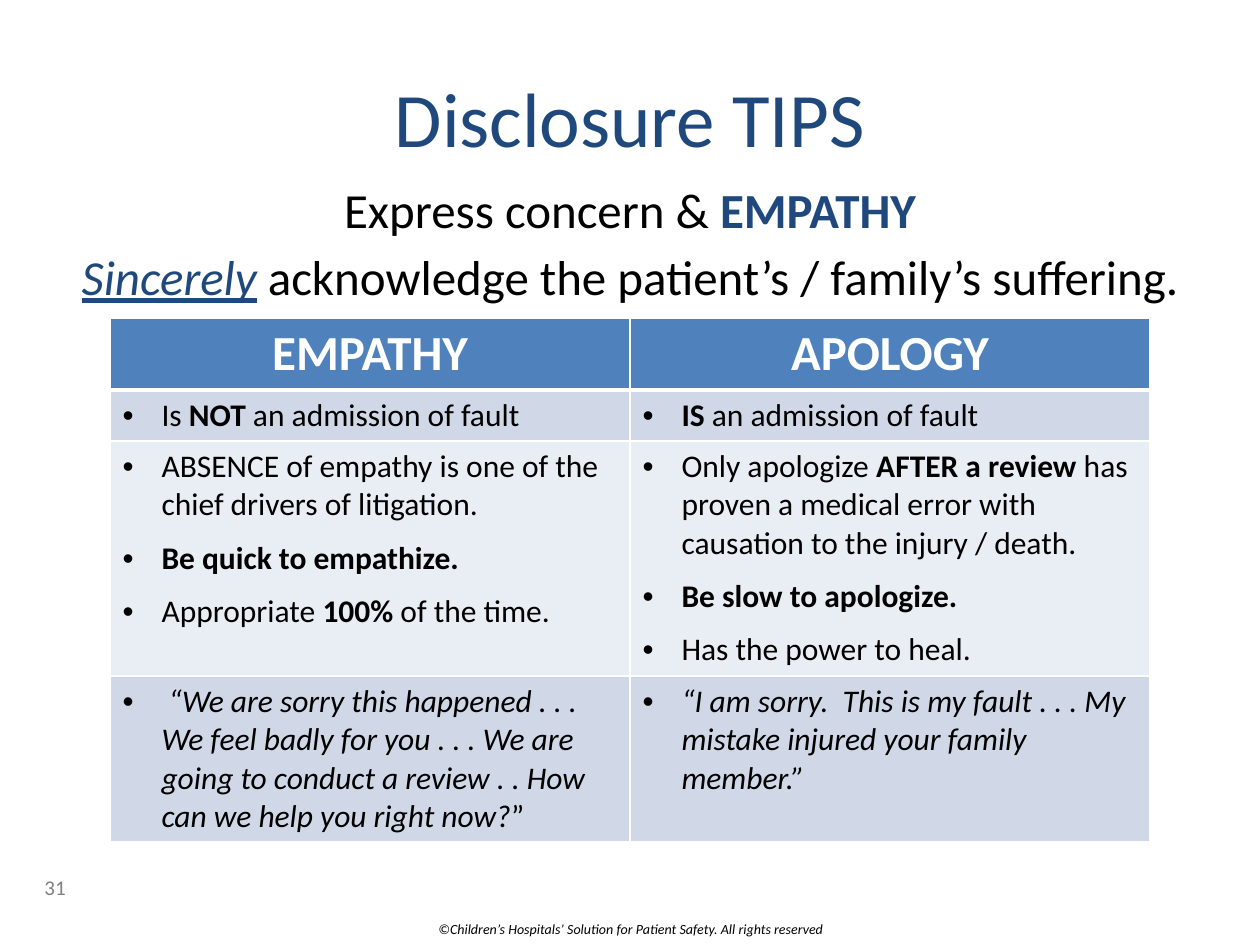
from lxml.etree import SubElement, Element
from pptx import Presentation
from pptx.dml.color import RGBColor as Rgb
from pptx.enum.text import MSO_ANCHOR as Anchor, PP_ALIGN as Align
from pptx.oxml.ns import qn
from pptx.util import Emu, Pt

SCALE = 914400 / 126
FONT = "Calibri"
HUES = {
    "navy": "1F497D", "blue": "4F81BD", "band": "D0D8E8", "pale": "E9EDF4",
    "black": "000000", "white": "FFFFFF", "gray": "808080",
}
HEADS = ["EMPATHY", "APOLOGY"]
# Each row holds two cells, each cell its bullets, each bullet its (text, style) runs.
ROWS = [
    [
        [[("Is ", ""), ("NOT", "b"), (" an admission of fault", "")]],
        [[("IS", "b"), (" an admission of fault", "")]],
    ],
    [
        [
            [("ABSENCE of empathy is one of the chief drivers of litigation.", "")],
            [("Be quick to empathize.", "b")],
            [("Appropriate ", ""), ("100%", "b"), (" of the time.", "")],
        ],
        [
            [("Only apologize ", ""), ("AFTER a review ", "b"),
             ("has proven a medical error with causation to the injury / death.", "")],
            [("Be slow to apologize.", "b")],
            [("Has the power to heal.", "")],
        ],
    ],
    [
        [[(" ", ""), ("“We are sorry this happened . . . We feel badly for you . . . "
                      "We are going to conduct a review . . How can we help you right now?", "i"),
          ("”", "")]],
        [[("“I am sorry.  This is my fault . . . My mistake injured your family member.”", "i")]],
    ],
]
HEIGHTS = [72, 51, 235, 166]


def px(n):
    return Emu(round(n * SCALE))


def write(para, runs, size, hue="black", align=Align.LEFT, before=0):
    """Add (text, style[, hue]) runs; style letters are b, i and u."""
    para.alignment = align
    para.space_before = Pt(before)
    for text, style, *own in runs:
        run = para.add_run()
        run.text = text
        font = run.font
        font.name, font.size = FONT, Pt(size)
        font.bold, font.italic, font.underline = ("b" in style, "i" in style, "u" in style)
        font.color.rgb = Rgb.from_string(HUES[own[0] if own else hue])


def frame(slide, box, anchor=Anchor.TOP):
    text = slide.shapes.add_textbox(*map(px, box)).text_frame
    text.word_wrap = True
    text.vertical_anchor = anchor
    return text


def bullet(para):
    props = para._p.get_or_add_pPr()
    props.set("marL", str(px(39)))
    props.set("indent", str(-px(39)))
    SubElement(props, qn("a:buFont"), typeface="Arial")
    SubElement(props, qn("a:buChar"), char="•")


def edge(cell, **widths):
    """Give the cell white borders of the given point widths."""
    props = cell._tc.get_or_add_tcPr()
    for spot, side in enumerate("LRTB"):
        line = Element(qn(f"a:ln{side}"), w=str(Pt(widths.get(side, 1))))
        fill = SubElement(line, qn("a:solidFill"))
        SubElement(fill, qn("a:srgbClr"), val=HUES["white"])
        props.insert(spot, line)


def paint(cell, hue):
    cell.fill.solid()
    cell.fill.fore_color.rgb = Rgb.from_string(HUES[hue])


def title(slide, box):
    text = frame(slide, box, Anchor.MIDDLE)
    write(text.paragraphs[0], [("Disclosure TIPS", "")], 44, "navy", Align.CENTER)


def intro(slide, box):
    text = frame(slide, box)
    text.margin_top = px(9)
    write(text.paragraphs[0], [("Express concern & ", ""), ("EMPATHY", "b", "navy")],
          28, align=Align.CENTER)
    write(text.add_paragraph(),
          [("Sincerely", "iu", "navy"), (" acknowledge the patient’s / family’s suffering.", "")],
          28, align=Align.CENTER, before=4.5)


def compare(slide, box):
    left, top, width, _ = box
    table = slide.shapes.add_table(
        len(HEIGHTS), len(HEADS), *map(px, (left, top, width, sum(HEIGHTS)))).table
    for col in table.columns:
        col.width = px(width / len(HEADS))
    for row, high in zip(table.rows, HEIGHTS):
        row.height = px(high)
    for c, head in enumerate(HEADS):
        cell = table.cell(0, c)
        paint(cell, "blue")
        edge(cell, B=3)
        write(cell.text_frame.paragraphs[0], [(head, "b")], 28, "white", Align.CENTER)
    for r, row in enumerate(ROWS, 1):
        for c, items in enumerate(row):
            cell = table.cell(r, c)
            paint(cell, "band" if r % 2 else "pale")
            edge(cell, T=3 if r == 1 else 1)
            text = cell.text_frame
            for i, runs in enumerate(items):
                para = text.add_paragraph() if i else text.paragraphs[0]
                bullet(para)
                write(para, runs, 18, before=8.5 if i else 0)


def footer(slide, box):
    left, top, width, high = box
    number = frame(slide, (left, top, 294, 50))
    write(number.paragraphs[0], [("31", "")], 12, "gray")
    side = 413
    rights = frame(slide, ((left * 2 + width - side) / 2, top + high - 30, side, 30))
    write(rights.paragraphs[0],
          [("©Children’s Hospitals’ Solution for Patient Safety. All rights reserved", "i")],
          8, align=Align.RIGHT)


def main():
    deck = Presentation()
    deck.slide_width, deck.slide_height = px(1260), px(945)
    slide = deck.slides.add_slide(deck.slide_layouts[6])
    footer(slide, (32, 868, 1196, 76))
    intro(slide, (63, 171, 1134, 624))
    compare(slide, (110, 318, 1040, 524))
    title(slide, (63, 38, 1134, 158))
    deck.save("out.pptx")


if __name__ == "__main__":
    main()
